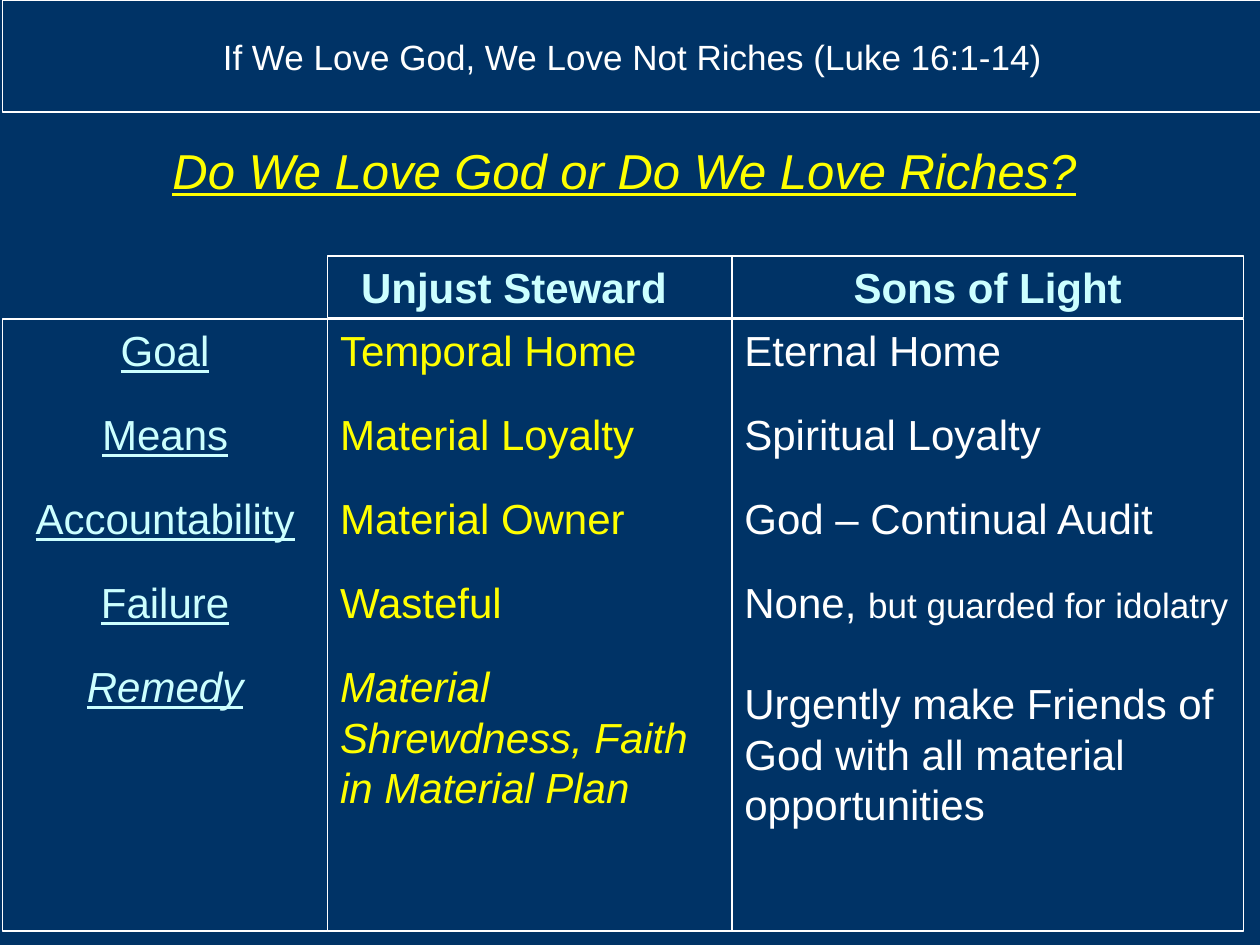
from dataclasses import dataclass

from pptx import Presentation
from pptx.dml.color import RGBColor
from pptx.enum.shapes import MSO_SHAPE
from pptx.enum.text import MSO_ANCHOR, PP_ALIGN
from pptx.util import Inches, Pt


@dataclass(frozen=True)
class Theme:
    font: str = "Arial"
    navy: RGBColor = RGBColor(0x00, 0x33, 0x66)
    white: RGBColor = RGBColor(0xFF, 0xFF, 0xFF)
    yellow: RGBColor = RGBColor(0xFF, 0xFF, 0x00)
    aqua: RGBColor = RGBColor(0xCC, 0xFF, 0xFF)
    question_size: float = 28
    body_size: float = 24
    small_size: float = 20
    row_gap: float = 19.2
    wide_gap: float = 28.8


THEME = Theme()


@dataclass(frozen=True)
class Run:
    text: str
    size: float = THEME.body_size
    bold: bool = False
    italic: bool = False
    underline: bool = False


@dataclass(frozen=True)
class Row:
    runs: tuple[Run, ...]
    gap: float = THEME.row_gap


@dataclass(frozen=True)
class Box:
    left: float
    top: float
    width: float
    height: float
    rows: tuple[Row, ...]
    color: RGBColor
    align: PP_ALIGN = PP_ALIGN.CENTER
    anchor: MSO_ANCHOR = MSO_ANCHOR.TOP
    right_inset: float = 0.1
    fill: RGBColor | None = None
    line_width: float = 1


def row(text: str, **style) -> Row:
    return Row((Run(text, **style),))


def write_text(shape, box: Box) -> None:
    frame = shape.text_frame
    frame.word_wrap = True
    frame.vertical_anchor = box.anchor
    frame.margin_right = Inches(box.right_inset)
    for index, line in enumerate(box.rows):
        paragraph = frame.add_paragraph() if index else frame.paragraphs[0]
        paragraph.alignment = box.align
        if index:
            paragraph.space_before = Pt(line.gap)
        for part in line.runs:
            run = paragraph.add_run()
            run.text = part.text
            font = run.font
            font.name = THEME.font
            font.size = Pt(part.size)
            font.bold = part.bold
            font.italic = part.italic
            font.underline = part.underline
            font.color.rgb = box.color


def bounds(box: Box) -> tuple[int, ...]:
    return tuple(Inches(length) for length in (box.left, box.top, box.width, box.height))


def add_panel(slide, box: Box) -> None:
    """Draw an outlined rectangle with its text."""
    shape = slide.shapes.add_shape(MSO_SHAPE.RECTANGLE, *bounds(box))
    shape.shadow.inherit = False
    if box.fill is None:
        shape.fill.background()
    else:
        shape.fill.solid()
        shape.fill.fore_color.rgb = box.fill
    shape.line.color.rgb = THEME.white
    shape.line.width = Pt(box.line_width)
    write_text(shape, box)


LABEL_LEFT, STEWARD_LEFT, SONS_LEFT, TABLE_RIGHT = 0.02, 2.6, 5.81, 9.87
HEADING_TOP, HEADING_HEIGHT = 2.03, 0.49
BODY_TOP, BODY_HEIGHT = 2.53, 4.86
LABEL_WIDTH = STEWARD_LEFT - LABEL_LEFT
STEWARD_WIDTH = SONS_LEFT - STEWARD_LEFT
SONS_WIDTH = TABLE_RIGHT - SONS_LEFT

LABELS = (
    *(row(text, underline=True) for text in ("Goal", "Means", "Accountability", "Failure")),
    row("Remedy", italic=True, underline=True),
)
STEWARD_ROWS = (
    *(row(text) for text in ("Temporal Home", "Material Loyalty", "Material Owner", "Wasteful")),
    row("Material Shrewdness, Faith in Material Plan", italic=True),
)
SONS_ROWS = (
    *(row(text) for text in ("Eternal Home", "Spiritual Loyalty", "God – Continual Audit")),
    Row((Run("None, "), Run("but guarded for idolatry", THEME.small_size))),
    Row((Run("Urgently make Friends of God with all material opportunities"),), THEME.wide_gap),
)

PANELS = (
    Box(LABEL_LEFT, BODY_TOP, LABEL_WIDTH, BODY_HEIGHT, LABELS, THEME.aqua),
    Box(STEWARD_LEFT, BODY_TOP, STEWARD_WIDTH, BODY_HEIGHT, STEWARD_ROWS,
        THEME.yellow, PP_ALIGN.LEFT),
    Box(SONS_LEFT, BODY_TOP, SONS_WIDTH, BODY_HEIGHT, SONS_ROWS,
        THEME.white, PP_ALIGN.LEFT),
    Box(STEWARD_LEFT, HEADING_TOP, STEWARD_WIDTH, HEADING_HEIGHT,
        (row("Unjust Steward", bold=True),), THEME.aqua, right_inset=0.35),
    Box(SONS_LEFT, HEADING_TOP, SONS_WIDTH, HEADING_HEIGHT,
        (row("Sons of Light", bold=True),), THEME.aqua),
    Box(0.02, 0, 10, 0.89,
        (row("If We Love God, We Love Not Riches (Luke 16:1-14)", size=THEME.small_size),),
        THEME.white, anchor=MSO_ANCHOR.MIDDLE, fill=THEME.navy, line_width=0.75),
)
QUESTION = Box(
    0.71, 1.17, 8.49, 0.35,
    (row("Do We Love God or Do We Love Riches?", size=THEME.question_size,
         italic=True, underline=True),),
    THEME.yellow, anchor=MSO_ANCHOR.MIDDLE,
)


def main() -> None:
    presentation = Presentation()
    presentation.slide_width = Inches(10)
    presentation.slide_height = Inches(7.5)
    slide = presentation.slides.add_slide(presentation.slide_layouts[6])
    slide.background.fill.solid()
    slide.background.fill.fore_color.rgb = THEME.navy
    for panel in PANELS:
        add_panel(slide, panel)
    write_text(slide.shapes.add_textbox(*bounds(QUESTION)), QUESTION)
    presentation.save("out.pptx")


if __name__ == "__main__":
    main()
